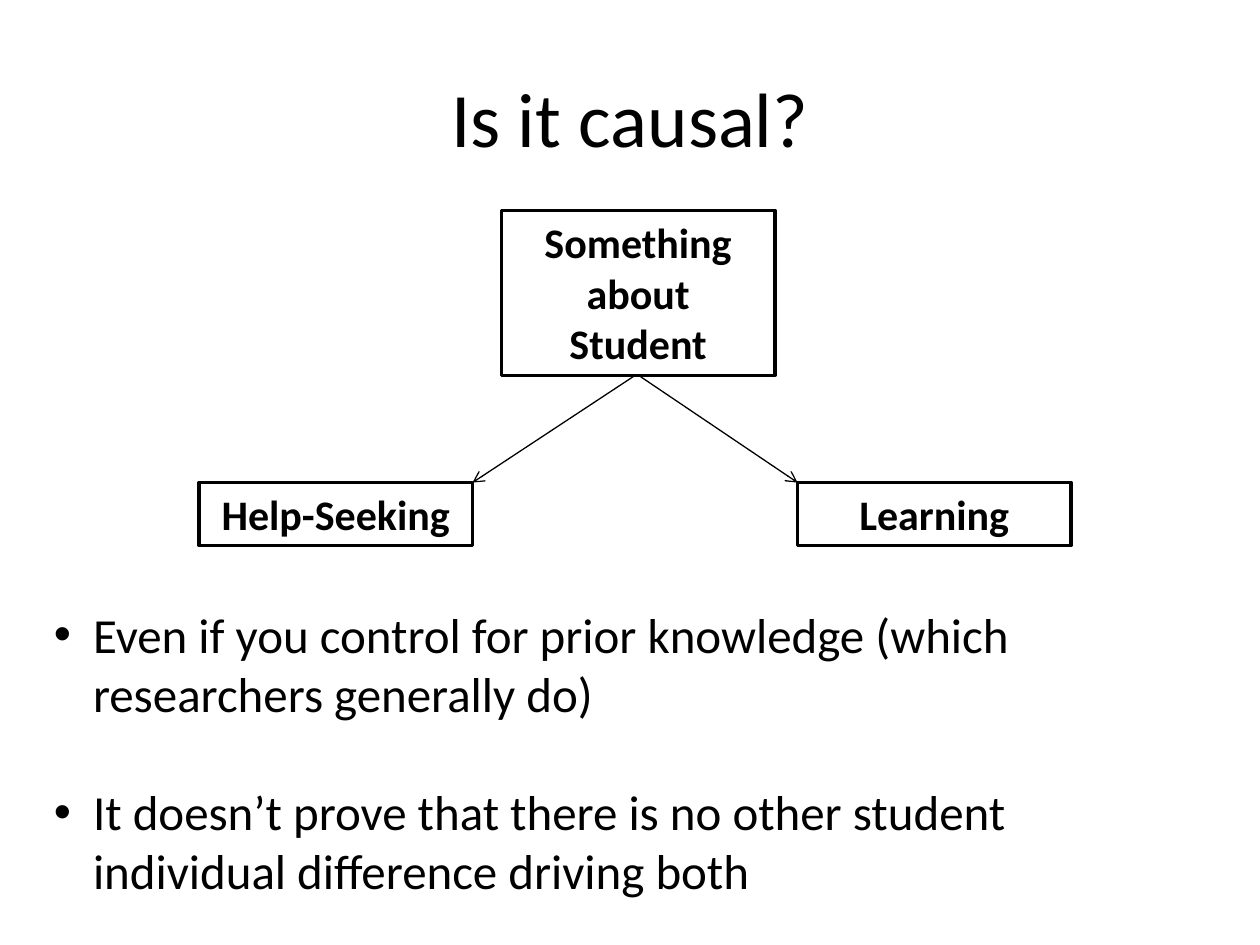
from lxml import etree
from pptx import Presentation
from pptx.dml.color import RGBColor
from pptx.enum.shapes import MSO_CONNECTOR, MSO_SHAPE
from pptx.enum.text import MSO_ANCHOR, PP_ALIGN
from pptx.oxml.ns import qn
from pptx.util import Inches, Pt

BLACK = RGBColor(0, 0, 0)
WHITE = RGBColor(255, 255, 255)
CENTER, LEFT = PP_ALIGN.CENTER, PP_ALIGN.LEFT
MIDDLE, TOP = MSO_ANCHOR.MIDDLE, MSO_ANCHOR.TOP
RECTANGLE, STRAIGHT = MSO_SHAPE.RECTANGLE, MSO_CONNECTOR.STRAIGHT
FONT = "Calibri"

# Content
TITLE = "Is it causal?"
CAUSE = "Something about Student"
EFFECTS = ["Help-Seeking", "Learning"]
POINTS = [
    "Even if you control for prior knowledge (which researchers generally do)",
    "It doesn’t prove that there is no other student individual difference driving both",
]

# Layout in inches
SLIDE_W, SLIDE_H = 10, 7.5
BOX_W = 2.17
CAUSE_LEFT, CAUSE_TOP, CAUSE_H = 3.98, 1.67, 1.31
EFFECT_LEFT, EFFECT_TOP, EFFECT_H = 1.58, 3.83, 0.5
EFFECT_STEP = 4.75
BULLET_INDENT = 0.31

prs = Presentation()
prs.slide_width, prs.slide_height = Inches(SLIDE_W), Inches(SLIDE_H)
slide = prs.slides.add_slide(prs.slide_layouts[6])
slide.background.fill.solid()
slide.background.fill.fore_color.rgb = WHITE


def write(frame, lines, size, align=CENTER, anchor=TOP, bold=False):
    frame.word_wrap = True
    frame.vertical_anchor = anchor
    for i, line in enumerate(lines):
        paragraph = frame.paragraphs[0] if i == 0 else frame.add_paragraph()
        paragraph.text = line
        paragraph.alignment = align
        font = paragraph.font
        font.name, font.size, font.bold = FONT, Pt(size), bold
        font.color.rgb = BLACK


def add_text(left, top, width, height):
    box = slide.shapes.add_textbox(*map(Inches, (left, top, width, height)))
    return box.text_frame


def add_box(label, left, top, height):
    box = slide.shapes.add_shape(
        RECTANGLE, *map(Inches, (left, top, BOX_W, height)))
    box.shadow.inherit = False
    box.fill.solid()
    box.fill.fore_color.rgb = WHITE
    box.line.color.rgb = BLACK
    box.line.width = Pt(2)
    write(box.text_frame, [label], 24, bold=True)


def add_arrow(*ends):
    arrow = slide.shapes.add_connector(STRAIGHT, *map(Inches, ends))
    arrow.line.color.rgb = BLACK
    arrow.line.width = Pt(0.75)
    properties = arrow._element.spPr
    etree.SubElement(properties.find(qn("a:ln")), qn("a:tailEnd"), type="arrow")
    etree.SubElement(properties, qn("a:effectLst"))


# Title
write(add_text(0.5, 0.3, 9, 1.25), [TITLE], 44, anchor=MIDDLE)

# Common cause with an arrow to the near corner of each effect
effect_lefts = [EFFECT_LEFT + i * EFFECT_STEP for i in range(len(EFFECTS))]
for label, left in zip(EFFECTS, effect_lefts):
    add_box(label, left, EFFECT_TOP, EFFECT_H)
add_box(CAUSE, CAUSE_LEFT, CAUSE_TOP, CAUSE_H)
cause_bottom = CAUSE_TOP + CAUSE_H
near_corners = [effect_lefts[0] + BOX_W, effect_lefts[1]]
for start, corner in zip((5.04, 5.07), near_corners):
    add_arrow(start, cause_bottom, corner, EFFECT_TOP)

# Bullet points, one blank line's height apart
points = add_text(0.33, 4.75, 9.25, 2.46)
write(points, POINTS, 28, align=LEFT)
for i, paragraph in enumerate(points.paragraphs):
    paragraph.space_before = Pt(34 if i else 0)
    bullet = paragraph._p.get_or_add_pPr()
    bullet.set("marL", str(Inches(BULLET_INDENT)))
    bullet.set("indent", str(-Inches(BULLET_INDENT)))
    # The bullet must come before the default run properties
    defaults = bullet.find(qn("a:defRPr"))
    for tag, name, value in (("a:buFont", "typeface", "Arial"),
                             ("a:buChar", "char", "•")):
        defaults.addprevious(etree.Element(qn(tag), {name: value}))

prs.save("out.pptx")
